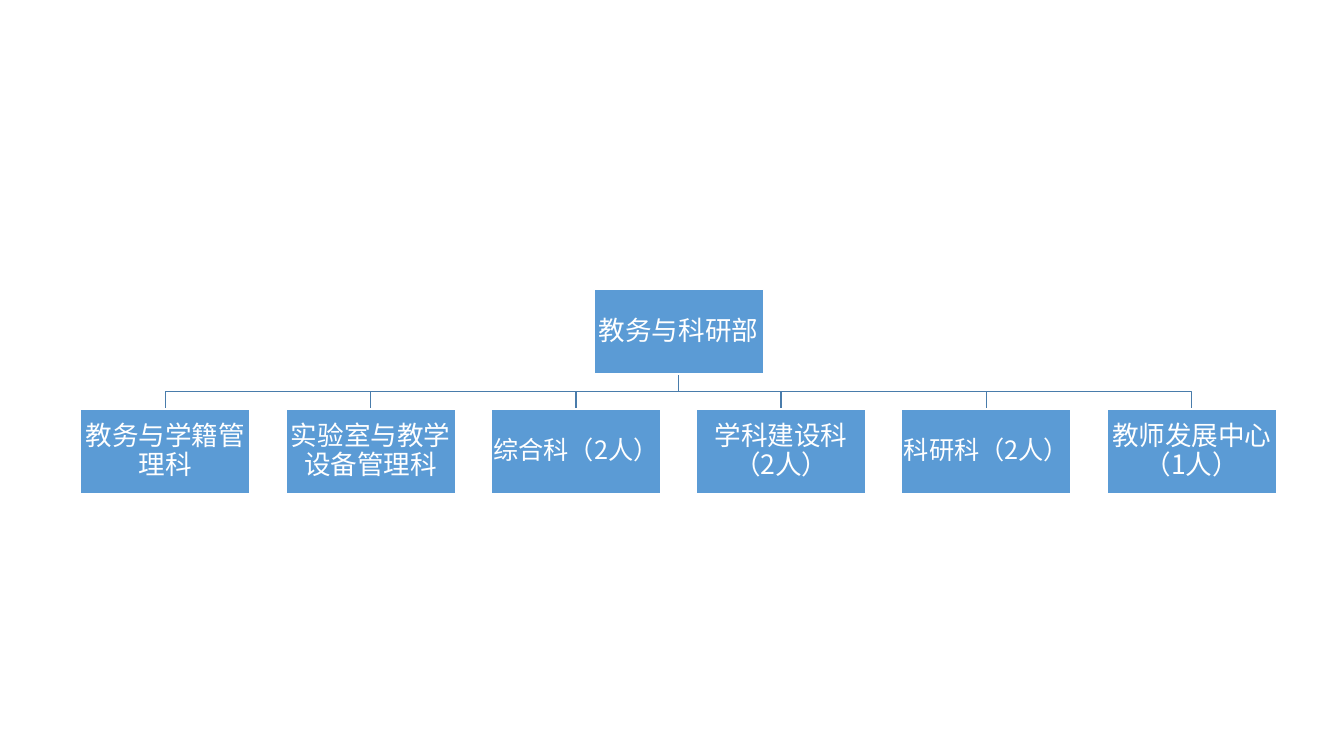
from dataclasses import dataclass
from lxml import etree
from pptx import Presentation, util as u
from pptx.dml.color import RGBColor
from pptx.enum import shapes, text
from pptx.oxml.ns import qn


@dataclass
class Theme:
    box: RGBColor = RGBColor(0x5B, 0x9B, 0xD5)
    link: RGBColor = RGBColor(0x49, 0x7C, 0xAB)
    white: RGBColor = RGBColor(0xFF, 0xFF, 0xFF)
    font: str = "Noto Sans CJK SC"
    size: int = 19
    small: int = 18


theme = Theme()
deck = Presentation()
deck.slide_width, deck.slide_height = u.Inches(13.33), u.Inches(7.5)
slide = deck.slides.add_slide(deck.slide_layouts[6])

# Grid: six columns, two rows
wide, high = 1.68, 0.84
left, right = 0.8, 10.98
top, low = 2.87, 4.06
head = "教务与科研部"
units = [
    ("教务与学籍管理科", theme.size),
    ("实验室与教学设备管理科", theme.size),
    ("综合科（2人）", theme.small),
    ("学科建设科（2人）", theme.size),
    ("科研科（2人）", theme.small),
    ("教师发展中心（1人）", theme.size),
]
step = (right - left) / (len(units) - 1)
mid = (left + right) / 2


def add_box(x, y, label, size):
    box = slide.shapes.add_shape(shapes.MSO_SHAPE.RECTANGLE, u.Inches(x),
                                 u.Inches(y), u.Inches(wide), u.Inches(high))
    box.shadow.inherit = False
    box.fill.solid()
    box.fill.fore_color.rgb = theme.box
    box.line.color.rgb = theme.white
    box.line.width = u.Pt(1)
    frame = box.text_frame
    frame.word_wrap = True
    frame.vertical_anchor = text.MSO_ANCHOR.MIDDLE
    frame.margin_left = frame.margin_right = u.Inches(0.01)
    frame.margin_top = frame.margin_bottom = u.Inches(0.01)
    para = frame.paragraphs[0]
    para.alignment = text.PP_ALIGN.CENTER
    para.line_spacing = 0.9
    run = para.add_run()
    run.text = label
    run.font.size = u.Pt(size)
    run.font.color.rgb = theme.white
    run.font.name = theme.font
    east = etree.SubElement(run.font._element, qn("a:ea"))
    east.set("typeface", theme.font)


# Branches from the head down to each unit
axis = mid + wide / 2
foot = top + high
bend = (foot + low) / 2
for col in reversed(range(len(units))):
    end = left + col * step + wide / 2
    pen = slide.shapes.build_freeform(u.Inches(axis), u.Inches(foot))
    turns = [(axis, bend), (end, bend), (end, low)]
    pen.add_line_segments([(u.Inches(x), u.Inches(y)) for x, y in turns],
                          close=False)
    link = pen.convert_to_shape()
    link.shadow.inherit = False
    link.fill.background()
    link.line.color.rgb = theme.link
    link.line.width = u.Pt(1)

# Head box and unit boxes
add_box(mid, top, head, theme.size)
for col, (label, size) in enumerate(units):
    add_box(left + col * step, low, label, size)

deck.save("out.pptx")
